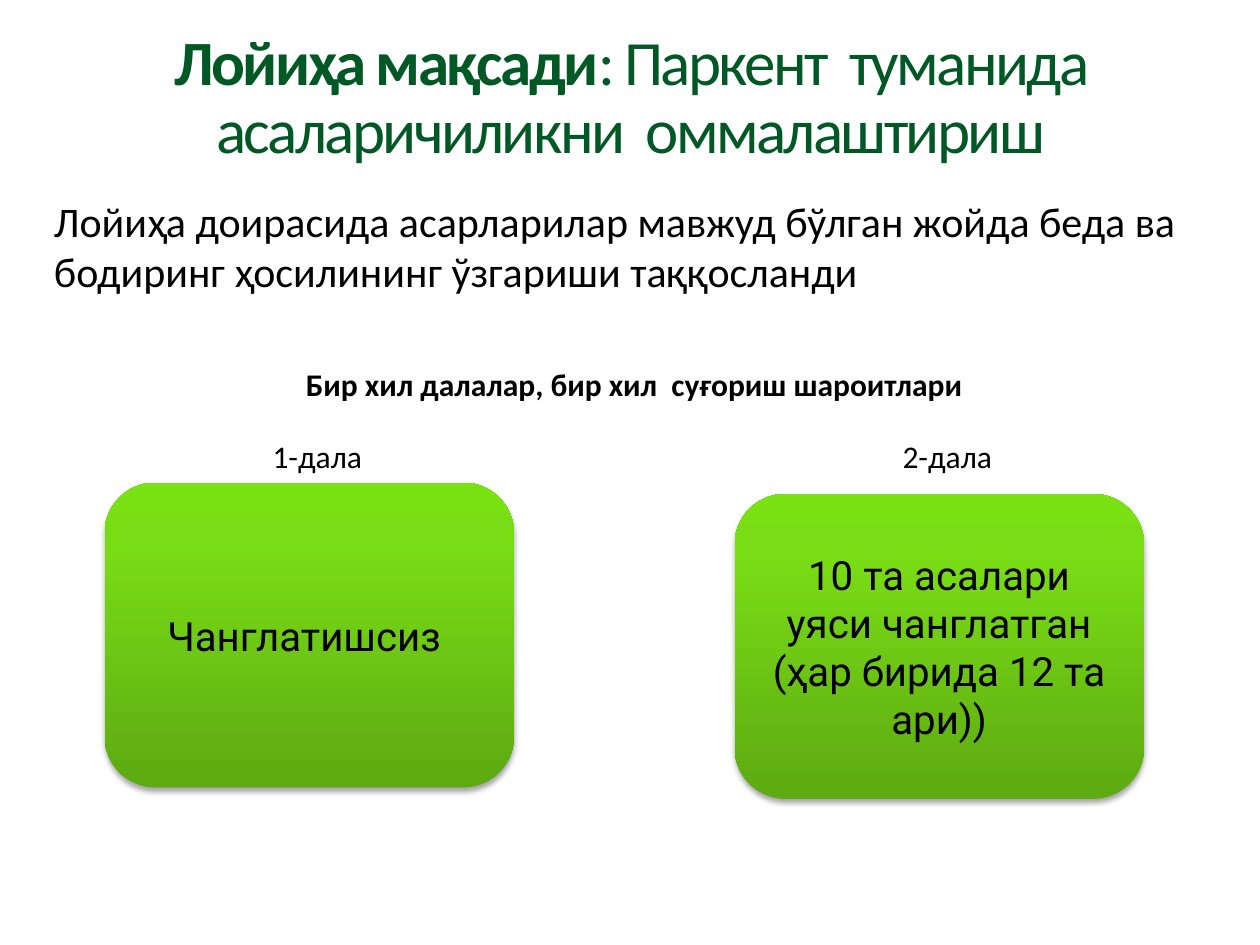
from copy import deepcopy

from pptx import Presentation
from pptx.dml.color import RGBColor
from pptx.enum.shapes import MSO_SHAPE as SHAPE
from pptx.enum.text import MSO_ANCHOR as ANCHOR, PP_ALIGN as ALIGN
from pptx.oxml import parse_xml
from pptx.oxml.ns import nsdecls, qn
from pptx.util import Inches, Pt

GRADIENT = [(0, "5DAA11"), (0.8, "79DD16"), (1, "7AE212")]
SHADOW = (
    f'<a:outerShdw {nsdecls("a")} blurRad="{Pt(3.1)}" dist="{Pt(1.8)}" '
    'dir="5400000" rotWithShape="0"><a:srgbClr val="000000">'
    '<a:alpha val="35000"/></a:srgbClr></a:outerShdw>'
)


def rgb(color):
    return RGBColor.from_string(color)


def add_text(x, y, w, h, text, size, align=ALIGN.LEFT, bold=False, wrap=True):
    tf = s.shapes.add_textbox(Inches(x), Inches(y), Inches(w), Inches(h)).text_frame
    tf.word_wrap = wrap
    p = tf.paragraphs[0]
    p.text = text
    p.alignment = align
    p.font.name, p.font.size, p.font.bold = "Calibri", Pt(size), bold
    p.font.color.rgb = rgb("000000")


prs = Presentation()
prs.slide_width, prs.slide_height = Inches(10), Inches(7.5)
s = prs.slides.add_slide(prs.slide_layouts[6])

# Title with a bold lead-in
tf = s.shapes.add_textbox(Inches(0.42), Inches(0.25), Inches(9.17), Inches(1.09)).text_frame
tf.word_wrap = True
tf.margin_left = tf.margin_top = tf.margin_right = tf.margin_bottom = 0
p = tf.paragraphs[0]
p.alignment, p.line_spacing = ALIGN.CENTER, 0.9
p.font.name, p.font.size = "Calibri", Pt(36)
p.font.color.rgb = rgb("005825")
for text, bold in [
    ("Лойиҳа мақсади", True),
    (": Паркент  туманида асаларичиликни  оммалаштириш", False),
]:
    r = p.add_run()
    r.text, r.font.bold = text, bold
    r.font._element.set("spc", "-150")

# Introduction and heading of the comparison
add_text(0.33, 1.5, 9.67, 0.91,
         "Лойиҳа доирасида асарларилар мавжуд бўлган жойда беда ва "
         "бодиринг ҳосилининг ўзгариши таққосланди", 24)
add_text(2.33, 2.85, 5.47, 0.4, "Бир хил далалар, бир хил  суғориш шароитлари", 18, bold=True)

# The two fields, each with its label
for x, y, label, text in [
    (0.83, 3.83, " 1-дала", "Чанглатишсиз "),
    (5.83, 3.92, " 2-дала", "10 та асалари уяси чанглатган (ҳар бирида 12 та ари))"),
]:
    sp = s.shapes.add_shape(SHAPE.ROUNDED_RECTANGLE, Inches(x), Inches(y), Inches(3.25), Inches(2.42))
    sp.line.fill.background()
    sp.fill.gradient()
    sp.fill.gradient_angle = 90
    gs_list = sp._element.spPr.find(".//" + qn("a:gsLst"))
    gs_list.append(deepcopy(gs_list[0]))
    for stop, (position, color) in zip(sp.fill.gradient_stops, GRADIENT):
        stop.position, stop.color.rgb = position, rgb(color)
    sp.shadow.inherit = False
    sp._element.spPr.find(qn("a:effectLst")).append(parse_xml(SHADOW))

    tf = sp.text_frame
    tf.word_wrap, tf.vertical_anchor = True, ANCHOR.MIDDLE
    p = tf.paragraphs[0]
    p.text, p.alignment = text, ALIGN.CENTER
    p.font.name, p.font.size = "Roboto", Pt(23)
    p.font.color.rgb = rgb("000000")

    add_text(x + 1.17, 3.42, 0.98, 0.4, label, 18, ALIGN.CENTER, wrap=False)

prs.save("out.pptx")
